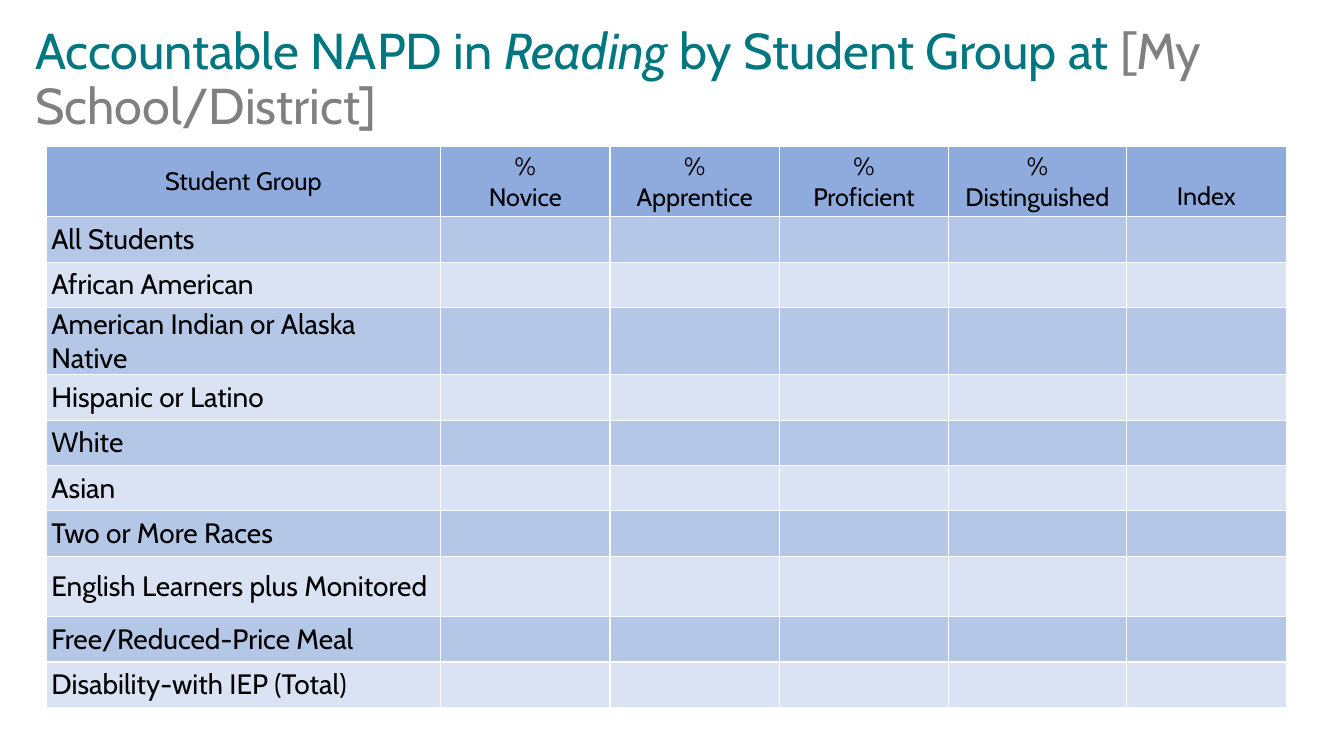
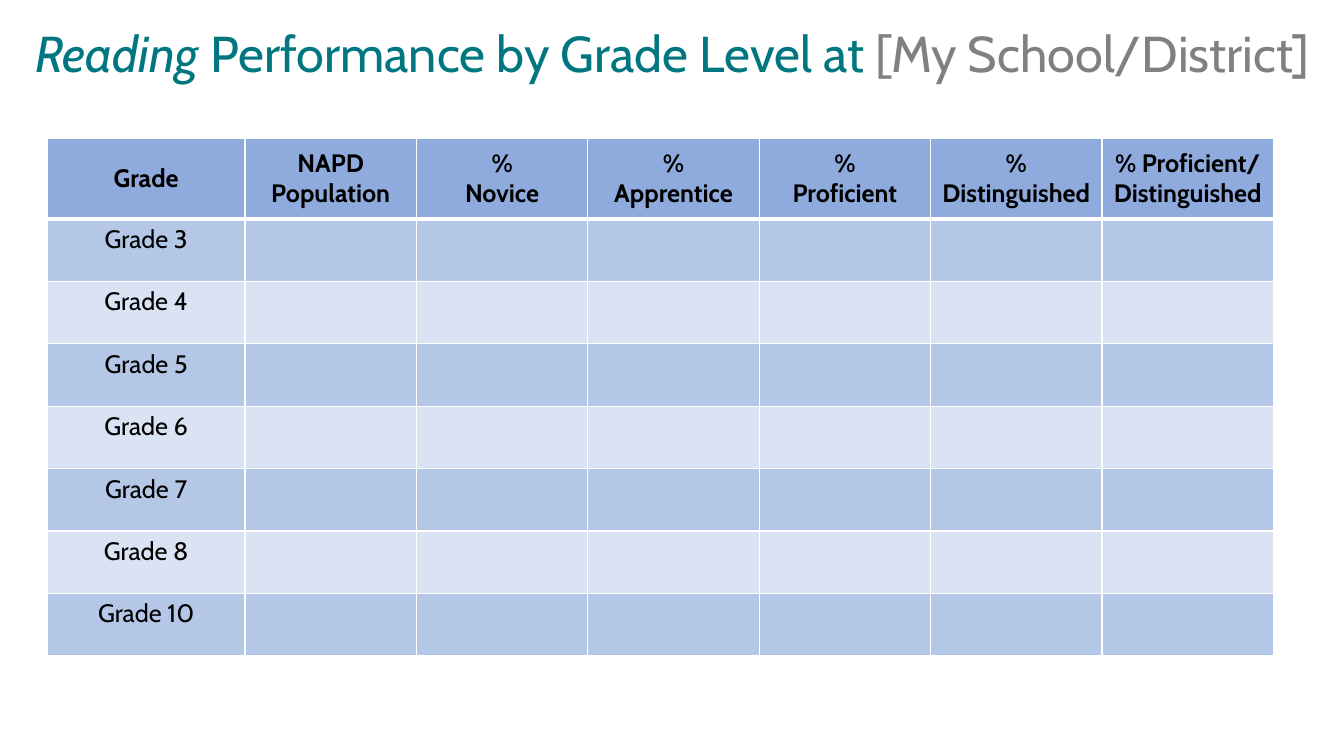
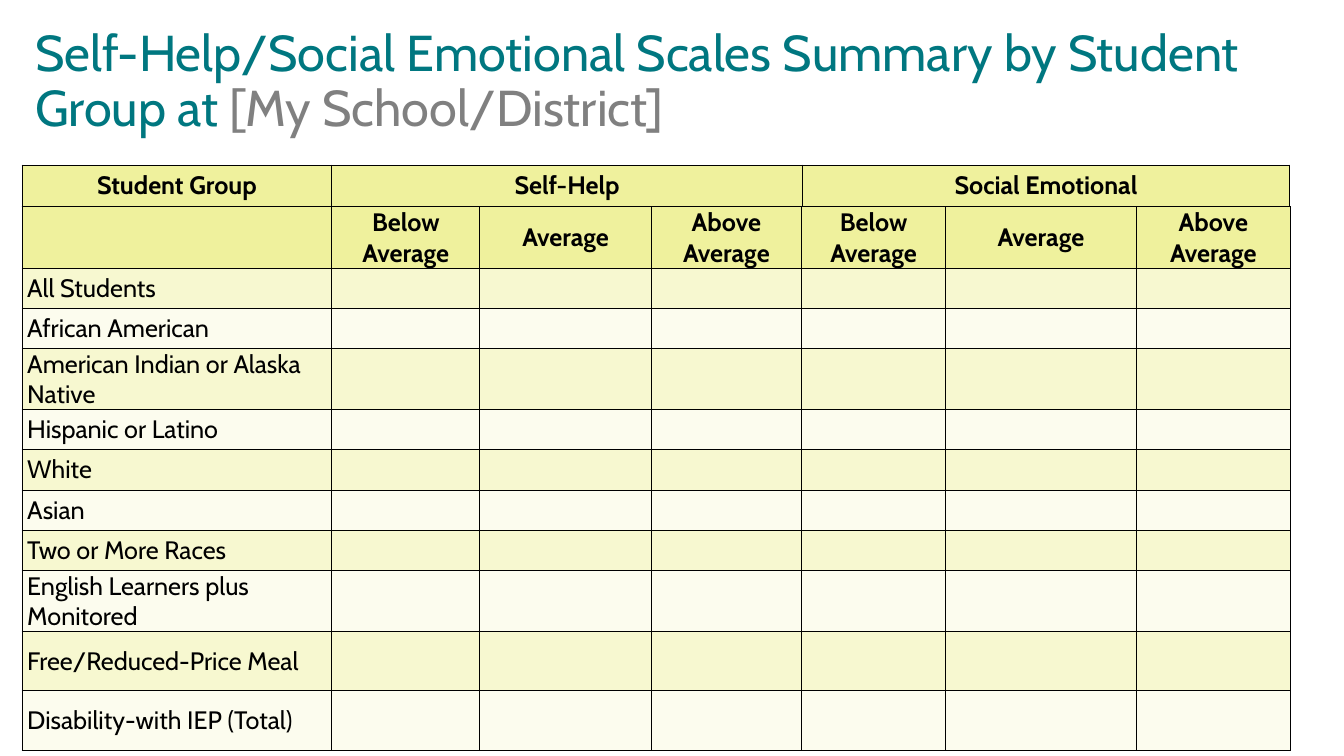
from lxml.etree import SubElement
from pptx import Presentation
from pptx.dml.color import RGBColor
from pptx.enum.text import MSO_ANCHOR as Anchor, PP_ALIGN as Align
from pptx.oxml.ns import qn
from pptx.util import Pt

PX = 9144  # 100 px to the inch
FONT = "Cabin"
HUES = {
    "teal": "007780", "gray": "808080", "black": "000000", "white": "FFFFFF",
    "blue": "8FAADC", "sky": "B4C7E7", "ice": "DAE3F3",
    "lime": "EFF19D", "cream": "F7F8D0", "pale": "FCFCEE",
}
BLUES = {"head": "blue", "bands": ("sky", "ice"), "line": "white"}
LIMES = {"head": "lime", "bands": ("cream", "pale"), "line": "black"}

SCHOOL = ("[My School/District]", "gray", False)
GROUPS = [
    "All Students", "African American", "American Indian or Alaska Native",
    "Hispanic or Latino", "White", "Asian", "Two or More Races",
    "English Learners plus Monitored", "Free/Reduced-Price Meal",
    "Disability-with IEP (Total)",
]
GRADES = [f"Grade {n}" for n in (3, 4, 5, 6, 7, 8, 10)]
SCALES = ["Below Average", "Average", "Above Average"]

# Cell styles: size, bold, align, anchor, margins (left, top, right, bottom)
WIDE, SLIM, TIGHT = (10, 5, 10, 5), (5, 0, 5, 0), (1, 1, 1, 0)
PLAIN = (18, False, Align.CENTER, Anchor.MIDDLE, WIDE)
LOW = (18, False, Align.CENTER, Anchor.BOTTOM, WIDE)
BOLD = (18, True, Align.CENTER, Anchor.MIDDLE, WIDE)
SNUG = (18, True, Align.CENTER, Anchor.MIDDLE, TIGHT)
TOP = (18, True, Align.CENTER, Anchor.TOP, WIDE)
GRADE = (18, False, Align.CENTER, Anchor.TOP, WIDE)
GROUP = (20, False, Align.LEFT, Anchor.MIDDLE, SLIM)
SMALL = (18, False, Align.LEFT, Anchor.MIDDLE, SLIM)

SLIDES = [
    {
        "title": [("Accountable NAPD in ", "teal", False), ("Reading", "teal", True),
                  (" by Student Group at ", "teal", False), SCHOOL],
        "box": (1275, 160),
        "tables": [{
            "at": (46, 145), "look": BLUES, "rule": 1,
            "cols": [391, 168, 168, 168, 176, 159],
            "rows": [68, 45, 45, 65, 45, 45, 45, 45, 60, 45, 45],
            "head": ["Student Group", "%\nNovice", "%\nApprentice",
                     "%\nProficient", "% Distinguished", "Index"],
            "styles": [PLAIN] * 5 + [LOW],
            "names": GROUPS, "side": GROUP,
        }],
    },
    {
        "title": [("Reading", "teal", True),
                  (" Performance by Grade Level at ", "teal", False), SCHOOL],
        "box": (1333, 111),
        "tables": [{
            "at": (47, 137), "look": BLUES, "rule": 3,
            "cols": [196] + [170] * 6,
            "rows": [80] + [62] * 7,
            "head": ["Grade", "NAPD Population", "%\nNovice", "%\nApprentice",
                     "%\nProficient", "% Distinguished",
                     "% Proficient/\nDistinguished"],
            "styles": [BOLD] * 7,
            "names": GRADES, "side": GRADE,
        }],
    },
    {
        "title": [("Self-Help/Social Emotional Scales Summary by Student Group at ",
                   "teal", False), SCHOOL],
        "box": (1333, 164),
        "tables": [
            {
                "at": (22, 205), "look": LIMES, "rule": 1,
                "cols": [307, 147, 170, 149, 143, 189, 153],
                "rows": [60, 39, 39, 59, 39, 39, 39, 39, 59, 59, 59],
                "head": [""] + SCALES * 2,
                "styles": [SNUG] * 7,
                "names": GROUPS, "side": SMALL,
            },
            {
                "at": (22, 164), "look": LIMES, "rule": 1,
                "cols": [307, 467, 483], "rows": [41],
                "head": ["Student Group", "Self-Help", "Social Emotional"],
                "styles": [TOP] * 3,
                "names": [], "side": SMALL,
            },
        ],
    },
]


def tint(name):
    return RGBColor.from_string(HUES[name])


def add_run(para, text, size, hue, bold=False, slant=False):
    run = para.add_run()
    run.text = text
    font = run.font
    font.name, font.size = FONT, Pt(size)
    font.bold, font.italic = bold, slant
    font.color.rgb = tint(hue)


def add_title(slide, runs, size):
    wide, high = size
    frame = slide.shapes.add_textbox(0, 0, wide * PX, high * PX).text_frame
    frame.word_wrap = True
    frame.vertical_anchor = Anchor.MIDDLE
    para = frame.paragraphs[0]
    para.line_spacing = 0.9
    para._p.get_or_add_pPr().set("marL", str(25 * PX))
    for text, hue, slant in runs:
        add_run(para, text, 36, hue, slant=slant)


def edge(cell, hue, top, base):
    """Draw the four borders; top and base are widths in points."""
    props = cell._tc.get_or_add_tcPr()
    for tag, width in (("lnL", 1), ("lnR", 1), ("lnT", top), ("lnB", base)):
        line = SubElement(props, qn(f"a:{tag}"), w=str(Pt(width)))
        fill = SubElement(line, qn("a:solidFill"))
        SubElement(fill, qn("a:srgbClr"), val=HUES[hue])


def write(cell, text, style):
    size, bold, align, anchor, sides = style
    cell.vertical_anchor = anchor
    (cell.margin_left, cell.margin_top,
     cell.margin_right, cell.margin_bottom) = [side * PX for side in sides]
    frame = cell.text_frame
    for i, part in enumerate(text.split("\n")):
        para = frame.add_paragraph() if i else frame.paragraphs[0]
        para.alignment = align
        add_run(para, part, size, "black", bold)


def add_grid(slide, data):
    cols, rows, look = data["cols"], data["rows"], data["look"]
    left, top = data["at"]
    table = slide.shapes.add_table(
        len(rows), len(cols), left * PX, top * PX,
        sum(cols) * PX, sum(rows) * PX).table
    table.first_row = table.horz_banding = False
    for col, width in zip(table.columns, cols):
        col.width = width * PX
    for r, high in enumerate(rows):
        table.rows[r].height = high * PX
        hue = look["bands"][(r - 1) % 2] if r else look["head"]
        for c in range(len(cols)):
            cell = table.cell(r, c)
            edge(cell, look["line"], data["rule"] if r == 1 else 1,
                 1 if r else data["rule"])
            cell.fill.solid()
            cell.fill.fore_color.rgb = tint(hue)
    for c, (text, style) in enumerate(zip(data["head"], data["styles"])):
        if text:
            write(table.cell(0, c), text, style)
    for r, name in enumerate(data["names"], 1):
        write(table.cell(r, 0), name, data["side"])


def main():
    deck = Presentation()
    deck.slide_width, deck.slide_height = 1333 * PX, 750 * PX
    for page in SLIDES:
        slide = deck.slides.add_slide(deck.slide_layouts[6])
        add_title(slide, page["title"], page["box"])
        for data in page["tables"]:
            add_grid(slide, data)
    deck.save("out.pptx")


if __name__ == "__main__":
    main()
